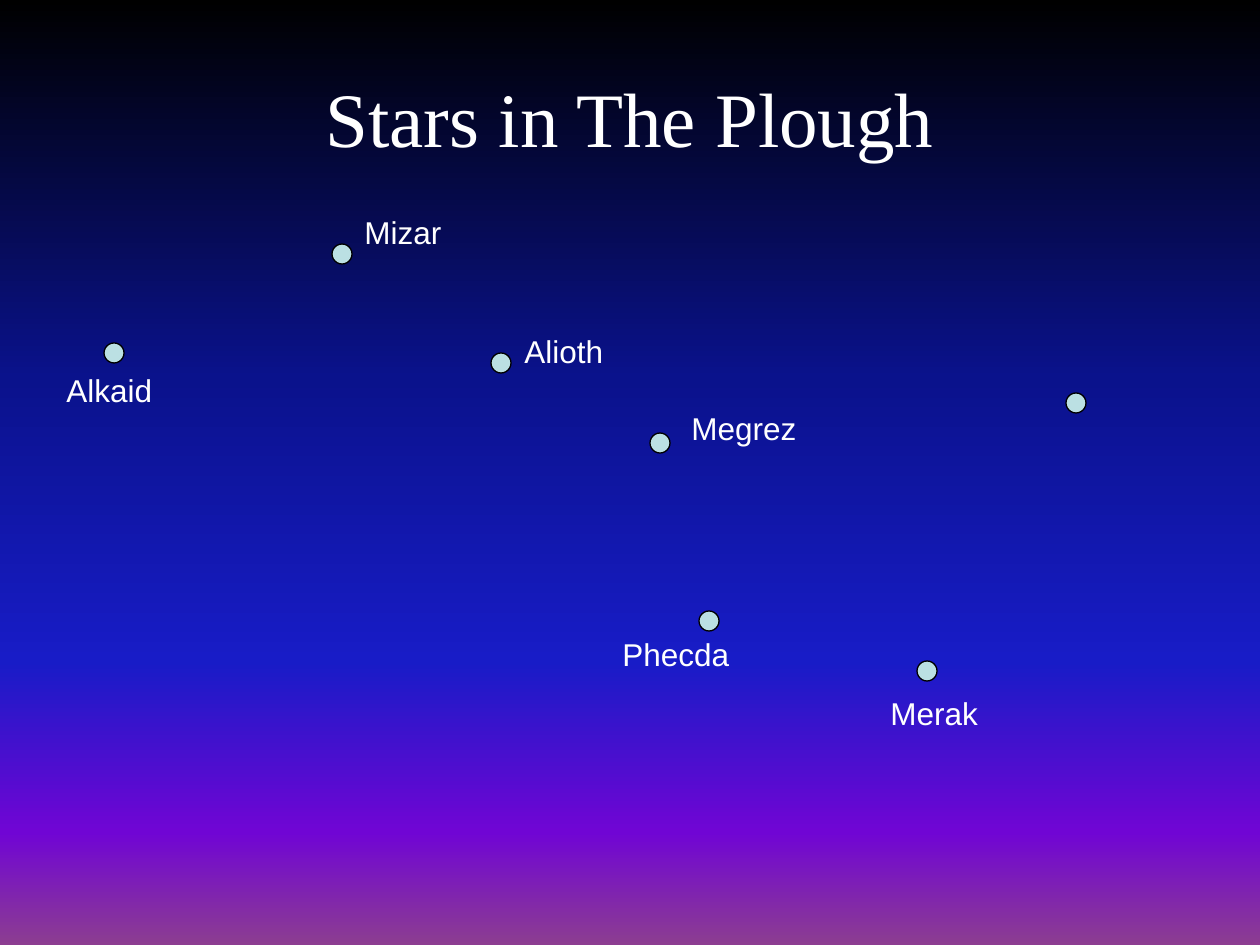
import lxml.etree
import pptx
import pptx.dml.color
import pptx.enum.shapes
import pptx.enum.text
import pptx.oxml.ns
import pptx.util

RGBColor = pptx.dml.color.RGBColor
WHITE = RGBColor(0xFF, 0xFF, 0xFF)
BLACK = RGBColor(0x00, 0x00, 0x00)
STAR_BLUE = RGBColor(0xBB, 0xE0, 0xE3)
NIGHT_SKY = [
    (0, BLACK),
    (40, RGBColor(0x0A, 0x12, 0x8C)),
    (70, RGBColor(0x18, 0x1C, 0xC7)),
    (88, RGBColor(0x70, 0x05, 0xD4)),
    (100, RGBColor(0x8C, 0x3D, 0x91)),
]

EMU_PER_PX = 914400 / 126
STAR_SIZE = 20
LABEL_HEIGHT = 50

# Star centres: x, y
STARS = [(114, 353), (342, 254), (501, 363), (660, 443),
         (709, 621), (1076, 403), (927, 671)]

# Star names: text, left, top, width
LABELS = [
    ("Alkaid", 54, 365, 129),
    ("Mizar", 352, 207, 199),
    ("Alioth", 512, 326, 179),
    ("Phecda", 610, 629, 169),
    ("Merak", 878, 688, 159),
    ("Megrez", 679, 403, 139),
]


def px(length):
    return pptx.util.Emu(round(length * EMU_PER_PX))


class StarChart:
    def __init__(self, slide):
        self.slide = slide

    def style(self, paragraph, font_name, size):
        paragraph.font.name = font_name
        paragraph.font.size = pptx.util.Pt(size)
        paragraph.font.color.rgb = WHITE

    def sky(self, stops):
        fill = self.slide.background.fill
        fill.gradient()
        fill.gradient_angle = 270
        # The public API cannot add stops, so the stop list is rebuilt
        qn = pptx.oxml.ns.qn
        stop_list = next(self.slide.background._cSld.iter(qn("a:gsLst")))
        for stop in list(stop_list):
            stop_list.remove(stop)
        for percent, color in stops:
            stop = lxml.etree.SubElement(stop_list, qn("a:gs"), pos=str(percent * 1000))
            lxml.etree.SubElement(stop, qn("a:srgbClr"), val=str(color))

    def title(self, text, left, top, width, height):
        heading = self.slide.shapes.title
        heading.left, heading.top = px(left), px(top)
        heading.width, heading.height = px(width), px(height)
        frame = heading.text_frame
        frame.text = text
        frame.vertical_anchor = pptx.enum.text.MSO_ANCHOR.MIDDLE
        frame.paragraphs[0].alignment = pptx.enum.text.PP_ALIGN.CENTER
        self.style(frame.paragraphs[0], "Times New Roman", 44)

    def label(self, text, left, top, width):
        frame = self.slide.shapes.add_textbox(
            px(left), px(top), px(width), px(LABEL_HEIGHT)).text_frame
        frame.word_wrap = True
        frame.auto_size = pptx.enum.text.MSO_AUTO_SIZE.SHAPE_TO_FIT_TEXT
        frame.text = text
        self.style(frame.paragraphs[0], "Arial", 18)

    def star(self, x, y):
        star = self.slide.shapes.add_shape(
            pptx.enum.shapes.MSO_SHAPE.OVAL,
            px(x - STAR_SIZE / 2), px(y - STAR_SIZE / 2), px(STAR_SIZE), px(STAR_SIZE))
        star.shadow.inherit = False
        star.fill.solid()
        star.fill.fore_color.rgb = STAR_BLUE
        star.line.color.rgb = BLACK
        star.line.width = pptx.util.Pt(0.75)


def main():
    deck = pptx.Presentation()
    deck.slide_width, deck.slide_height = px(1260), px(945)
    chart = StarChart(deck.slides.add_slide(deck.slide_layouts[5]))

    # Background and title
    chart.sky(NIGHT_SKY)
    chart.title("Stars in The Plough", 63, 38, 1134, 157)

    # Star names, then the stars in front
    for label in LABELS:
        chart.label(*label)
    for centre in STARS:
        chart.star(*centre)

    deck.save("out.pptx")


if __name__ == "__main__":
    main()
